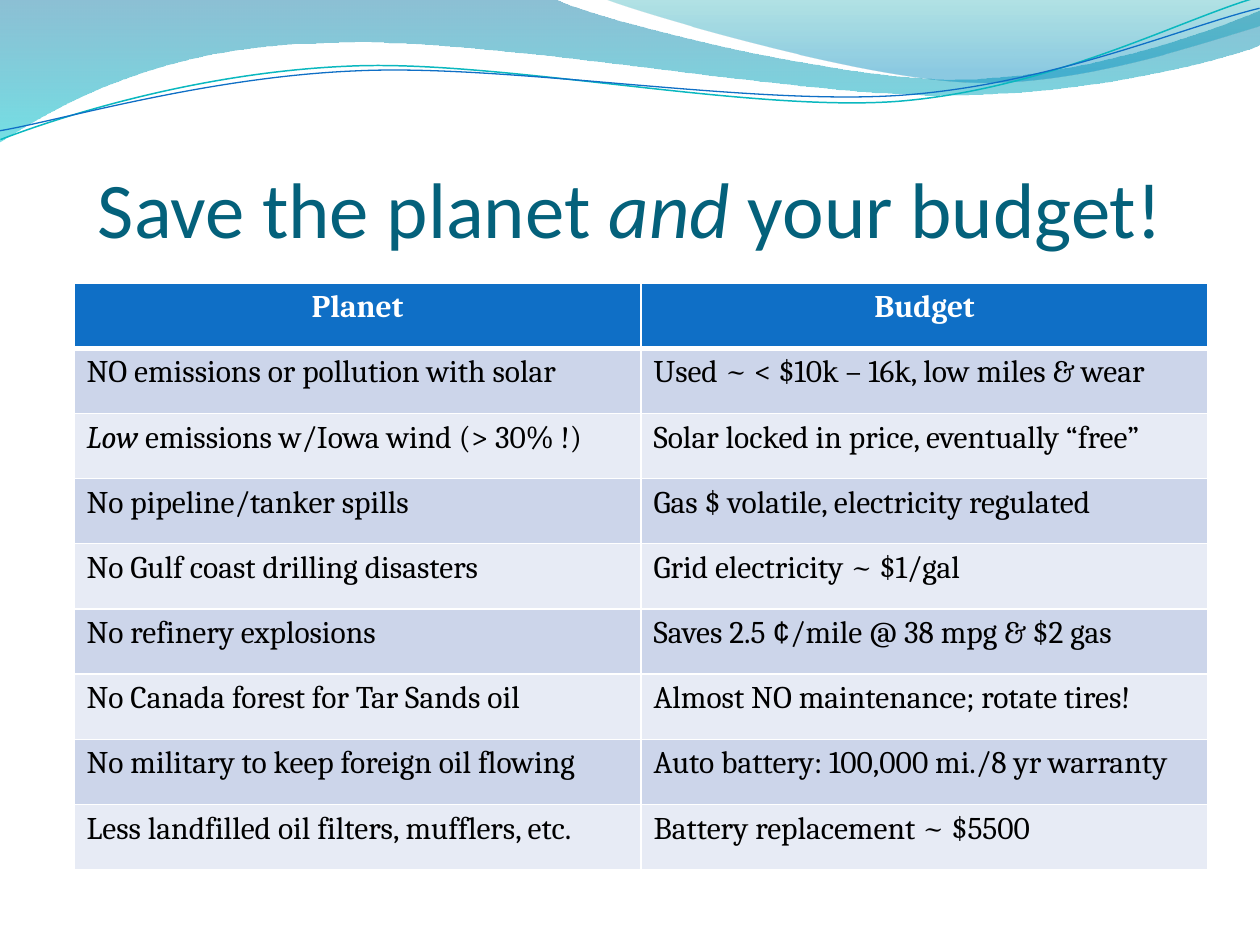
import pptx
import pptx.util
import pptx.dml.color
import pptx.enum.text
import pptx.oxml.ns
import lxml.etree

RGB = pptx.dml.color.RGBColor
ALIGN = pptx.enum.text.PP_ALIGN
qn = pptx.oxml.ns.qn

WHITE = RGB(0xFF, 0xFF, 0xFF)
BLACK = RGB(0x00, 0x00, 0x00)
TITLE = RGB(0x04, 0x61, 0x7B)
HEAD = RGB(0x0F, 0x6F, 0xC6)
BANDS = (RGB(0xE7, 0xEB, 0xF5), RGB(0xCC, 0xD5, 0xEA))
DEEP = RGB(0x00, 0x74, 0xA1)
AQUA = RGB(0x00, 0xC6, 0xCF)
TEAL = RGB(0x00, 0xA1, 0xA9)
SKY = RGB(0x00, 0x8B, 0xBF)
CYAN = RGB(0x0A, 0xB8, 0xBF)

TILT = 357.3  # degrees, both thin curves
ITALIC = ("Low", "and")

# Outlines in px: a pair is a line end, six numbers are a Bezier curve
WAVE = [(0, 0), (554, -1), (600, 21, 837, 79, 955, 79),
        (1075, 79, 1207, 33, 1260, 11), (1261, 45),
        (1239, 55, 1096, 96, 940, 95), (784, 95, 481, 35, 324, 43),
        (163, 45, 58, 105, -1, 142)]
CREST = [(604, -1), (641, 14, 859, 78, 969, 82),
         (1079, 87, 1211, 40, 1260, 26), (1260, 0)]
UPPER = [(-2, 110), (58, 90, 199, 52, 350, 53),
         (499, 53, 745, 118, 896, 114), (1049, 109, 1184, 45, 1260, 27)]
LOWER = [(-2, 101), (57, 94, 207, 57, 357, 58),
         (509, 58, 750, 112, 902, 108), (1052, 104, 1188, 52, 1262, 38)]

# A bar parts the runs of a text
ROWS = [
    ("Planet", "Budget"),
    ("NO emissions or pollution with solar",
     "Used ~ < $10k – 16k, low miles & wear"),
    ("Low| emissions w/Iowa wind (> 30% !)",
     "Solar locked in price, eventually “free”"),
    ("No pipeline/tanker spills", "Gas $ volatile, electricity regulated"),
    ("No Gulf coast drilling disasters", "Grid electricity ~ $1/gal"),
    ("No refinery explosions", "Saves 2.5 |¢|/mile @ 38 mpg & $2 gas"),
    ("No Canada forest for Tar Sands oil",
     "Almost NO maintenance; rotate tires!"),
    ("No military to keep foreign oil flowing",
     "Auto battery: 100,000 mi./8 yr warranty"),
    ("Less landfilled oil filters, mufflers, etc.",
     "Battery replacement ~ $5500"),
]


def px(num):
    return pptx.util.Emu(round(num * 914400 / 126))


def add_path(slide, parts, close):
    """Draw a freeform, then join each curve's three points into a Bezier."""
    pts = [(px(part[i]), px(part[i + 1]))
           for part in parts for i in range(0, len(part), 2)]
    pen = slide.shapes.build_freeform(*pts[0])
    pen.add_line_segments(pts[1:], close=close)
    shape = pen.convert_to_shape()
    shape.shadow.inherit = False
    lines = iter(list(shape.element.iter(qn("a:lnTo"))))
    for part in parts[1:]:
        node = next(lines)
        if len(part) == 6:
            node.tag = qn("a:cubicBezTo")
            for _ in range(2):
                extra = next(lines)
                node.append(extra[0])
                extra.getparent().remove(extra)
    return shape


def add_wave(slide, parts, stops):
    """Filled wave; stops are (position, colour, opacity in percent)."""
    shape = add_path(slide, parts, True)
    shape.line.fill.background()
    shape.fill.gradient()
    shape.fill.gradient_angle = 270
    for stop, (pos, color, _) in zip(shape.fill.gradient_stops, stops):
        stop.position = pos
        stop.color.rgb = color
    for node, (_, _, alpha) in zip(shape.element.iter(qn("a:srgbClr")), stops):
        lxml.etree.SubElement(node, qn("a:alpha"), val=str(alpha * 1000))


def add_curve(slide, parts, color, width):
    shape = add_path(slide, parts, False)
    shape.rotation = TILT
    shape.fill.background()
    shape.line.color.rgb = color
    shape.line.width = pptx.util.Pt(width)


def write(para, text, font, size, color, bold=False):
    for part in text.split("|"):
        run = para.add_run()
        run.text = part
        run.font.name = "Arial" if part == "¢" else font
        run.font.size = pptx.util.Pt(size)
        run.font.color.rgb = color
        run.font.bold = bold
        run.font.italic = part in ITALIC


def set_title(slide, text):
    title = slide.shapes.title
    title.left, title.top, title.width, title.height = map(
        px, (63, 97, 1134, 157))
    frame = title.text_frame
    frame.auto_size = pptx.enum.text.MSO_AUTO_SIZE.NONE
    frame.vertical_anchor = pptx.enum.text.MSO_ANCHOR.BOTTOM
    frame.margin_left = frame.margin_right = frame.margin_bottom = 0
    para = frame.paragraphs[0]
    para.alignment = ALIGN.CENTER
    write(para, text, "Calibri", 45, TITLE)
    # Bring the title in front of the waves
    slide.shapes.element.append(title.element)


def set_edges(cell, top, bottom):
    """White borders, widths in points."""
    props = cell._tc.get_or_add_tcPr()
    sides = (("L", 1), ("R", 1), ("T", top), ("B", bottom))
    for i, (side, width) in enumerate(sides):
        edge = lxml.etree.Element(
            qn("a:ln" + side), w=str(pptx.util.Pt(width)))
        fill = lxml.etree.SubElement(edge, qn("a:solidFill"))
        lxml.etree.SubElement(fill, qn("a:srgbClr"), val=str(WHITE))
        props.insert(i, edge)


def add_grid(slide, rows):
    table = slide.shapes.add_table(
        len(rows), 2, px(74), px(283), px(1134), px(587)).table
    table.horz_banding = False
    for r, row in enumerate(rows):
        head = r == 0
        for c, text in enumerate(row):
            cell = table.cell(r, c)
            cell.fill.solid()
            cell.fill.fore_color.rgb = HEAD if head else BANDS[r % 2]
            set_edges(cell, 3 if r == 1 else 1, 3 if head else 1)
            para = cell.text_frame.paragraphs[0]
            para.alignment = ALIGN.CENTER if head else ALIGN.LEFT
            write(para, text, "Cambria", 18, WHITE if head else BLACK, head)


def main():
    deck = pptx.Presentation()
    deck.slide_width, deck.slide_height = px(1260), px(945)
    slide = deck.slides.add_slide(deck.slide_layouts[5])

    # Waves along the top
    add_wave(slide, WAVE, [(0, DEEP, 45), (1, AQUA, 55)])
    add_wave(slide, CREST, [(0, TEAL, 30), (0.8, SKY, 45)])
    add_curve(slide, UPPER, CYAN, 0.85)
    add_curve(slide, LOWER, HEAD, 0.75)

    # Title and table
    set_title(slide, "Save the planet |and| your budget!")
    add_grid(slide, ROWS)
    deck.save("out.pptx")


if __name__ == "__main__":
    main()
